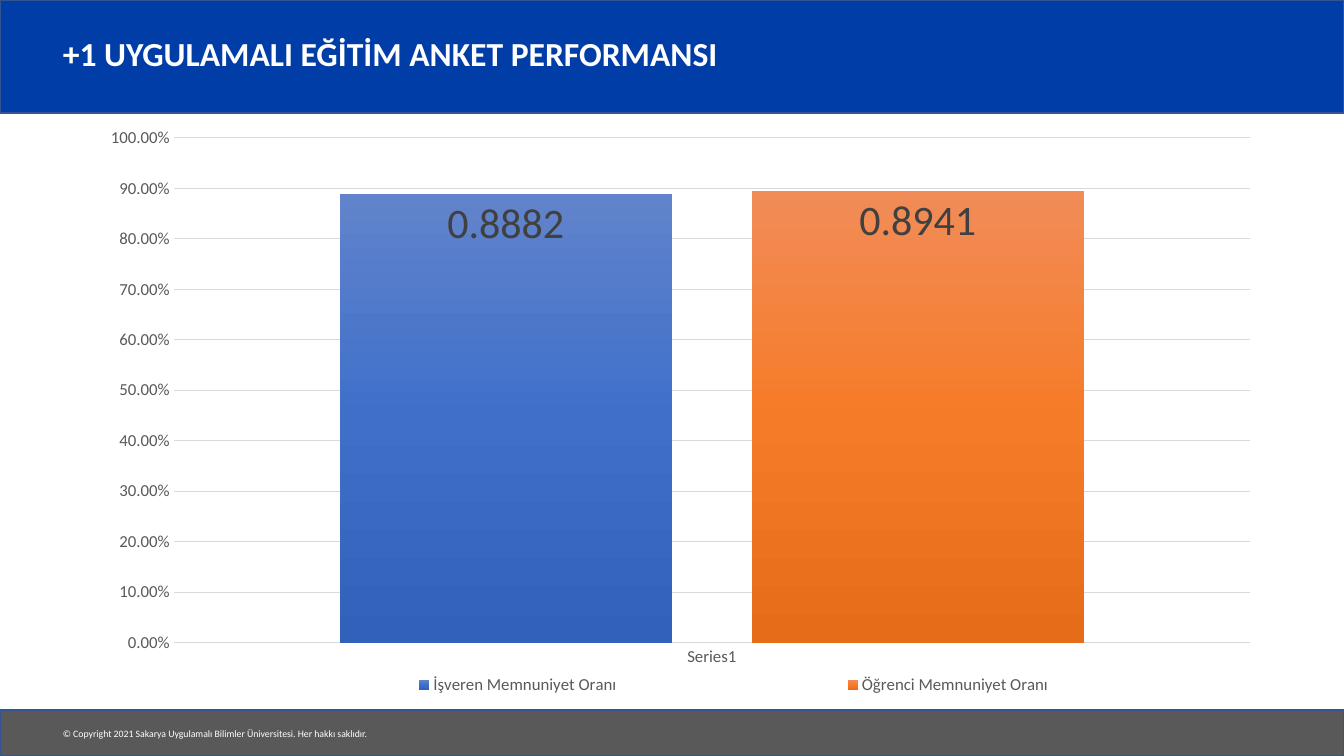
from pptx import Presentation, util as u
from pptx.chart.data import CategoryChartData
from pptx.dml.color import RGBColor
from pptx.enum import chart as ch, shapes, text
from pptx.oxml import parse_xml
from pptx.oxml.ns import nsdecls, qn

PX = 9071  # EMU in one px
WHITE = RGBColor(0xFF, 0xFF, 0xFF)
HEADER_BLUE = RGBColor(0x00, 0x3D, 0xA6)
FOOTER_GRAY = RGBColor(0x59, 0x59, 0x59)
BAND_EDGE = RGBColor(0x32, 0x54, 0x91)
AXIS_TEXT = RGBColor(0x59, 0x59, 0x59)
LABEL_TEXT = RGBColor(0x40, 0x40, 0x40)
GRID = RGBColor(0xD9, 0xD9, 0xD9)
EMPLOYER_BLUES = [RGBColor(0x61, 0x83, 0xCB), RGBColor(0x3E, 0x70, 0xCA),
                  RGBColor(0x30, 0x62, 0xBB)]
STUDENT_ORANGES = [RGBColor(0xF1, 0x8C, 0x57), RGBColor(0xF6, 0x7B, 0x28),
                   RGBColor(0xE5, 0x6C, 0x19)]

SATISFACTION = [
    ("İşveren Memnuniyet Oranı", 0.8882, EMPLOYER_BLUES),
    ("Öğrenci Memnuniyet Oranı", 0.8941, STUDENT_ORANGES),
]


class SurveySlide:
    def __init__(self, slide, font="Calibri"):
        self.slide = slide
        self.font = font

    def style(self, font, size, color, bold=False):
        font.name, font.size, font.bold = self.font, u.Pt(size), bold
        font.color.rgb = color

    def band(self, top, height, color):
        band = self.slide.shapes.add_shape(
            shapes.MSO_SHAPE.RECTANGLE, 0, top * PX, 1344 * PX, height * PX)
        band.shadow.inherit = False
        band.fill.solid()
        band.fill.fore_color.rgb = color
        band.line.color.rgb = BAND_EDGE
        band.line.width = u.Pt(1)

    def text(self, box, words, size, bold=False, wrap=True, spacing=1.0):
        frame = self.slide.shapes.add_textbox(*(n * PX for n in box)).text_frame
        frame.word_wrap = wrap
        frame.vertical_anchor = text.MSO_ANCHOR.MIDDLE
        line = frame.paragraphs[0]
        line.text = words
        line.line_spacing = spacing
        self.style(line.font, size, WHITE, bold)

    def place(self, part, index, x, y, w, h, target=""):
        """Give a chart part a manual layout, in fractions of the chart."""
        for old in part.findall(qn("c:layout")):
            part.remove(old)
        part.insert(index, parse_xml(
            f'<c:layout {nsdecls("c")}><c:manualLayout>{target}'
            '<c:xMode val="edge"/><c:yMode val="edge"/>'
            f'<c:x val="{x}"/><c:y val="{y}"/><c:w val="{w}"/><c:h val="{h}"/>'
            '</c:manualLayout></c:layout>'))

    def gradient(self, series, colors):
        """Fill the bars from top to bottom with three colours."""
        stops = "".join(f'<a:gs pos="{i * 50000}"><a:srgbClr val="{c}"/></a:gs>'
                        for i, c in enumerate(colors))
        series.format.fill.gradient()
        fill = series.format.fill._xPr.find(qn("a:gradFill"))
        fill.getparent().replace(fill, parse_xml(
            f'<a:gradFill {nsdecls("a")} rotWithShape="1"><a:gsLst>{stops}</a:gsLst>'
            '<a:lin ang="5400000" scaled="0"/></a:gradFill>'))

    def column_chart(self, box, category, rows):
        data = CategoryChartData(number_format="General")
        data.categories = [category]
        for name, value, _ in rows:
            data.add_series(name, [value])
        chart = self.slide.shapes.add_chart(
            ch.XL_CHART_TYPE.COLUMN_CLUSTERED, *(n * PX for n in box), data).chart
        self.style(chart.font, 12, AXIS_TEXT)
        chart.has_title = False

        plot = chart.plots[0]
        plot.gap_width, plot.overlap = 100, -24
        plot.vary_by_categories = False
        for series, (_, _, colors) in zip(plot.series, rows):
            self.gradient(series, colors)
            labels = series.data_labels
            labels.show_value = True
            labels.number_format = "General"
            labels.number_format_is_linked = False
            labels.position = ch.XL_LABEL_POSITION.INSIDE_END
            self.style(labels.font, 30, LABEL_TEXT)

        for axis in (chart.category_axis, chart.value_axis):
            axis.major_tick_mark = axis.minor_tick_mark = ch.XL_TICK_MARK.NONE
            self.style(axis.tick_labels.font, 12, AXIS_TEXT)
        chart.category_axis.format.line.color.rgb = GRID
        chart.category_axis.format.line.width = u.Pt(1)
        rates = chart.value_axis
        rates.minimum_scale, rates.maximum_scale, rates.major_unit = 0, 1, 0.1
        rates.tick_labels.number_format = "0.00%"
        rates.tick_labels.number_format_is_linked = False
        rates.format.line.fill.background()
        rates.major_gridlines.format.line.color.rgb = GRID
        rates.major_gridlines.format.line.width = u.Pt(0.75)

        chart.has_legend = True
        chart.legend.position = ch.XL_LEGEND_POSITION.BOTTOM
        chart.legend.include_in_layout = False
        self.style(chart.legend.font, 12, AXIS_TEXT)
        self.place(chart.legend._element, 1, 0.09, 0.92, 0.91, 0.06)
        self.place(plot._element.getparent(), 0, 0.073, 0.035, 0.907, 0.844,
                   '<c:layoutTarget val="inner"/>')


def main():
    deck = Presentation()
    deck.slide_width, deck.slide_height = 1344 * PX, 756 * PX
    page = SurveySlide(deck.slides.add_slide(deck.slide_layouts[6]))
    page.band(0, 113, HEADER_BLUE)
    page.band(710, 46, FOOTER_GRAY)
    page.text((53, 723, 332, 22),
              "© Copyright 2021 Sakarya Uygulamalı Bilimler Üniversitesi. "
              "Her hakkı saklıdır.", 7, wrap=False)
    page.text((53, 19, 1112, 74), "+1 UYGULAMALI EĞİTİM ANKET PERFORMANSI",
              24, bold=True, spacing=0.9)
    page.column_chart((87, 117, 1187, 598), "Series1", SATISFACTION)
    deck.save("out.pptx")


if __name__ == "__main__":
    main()
